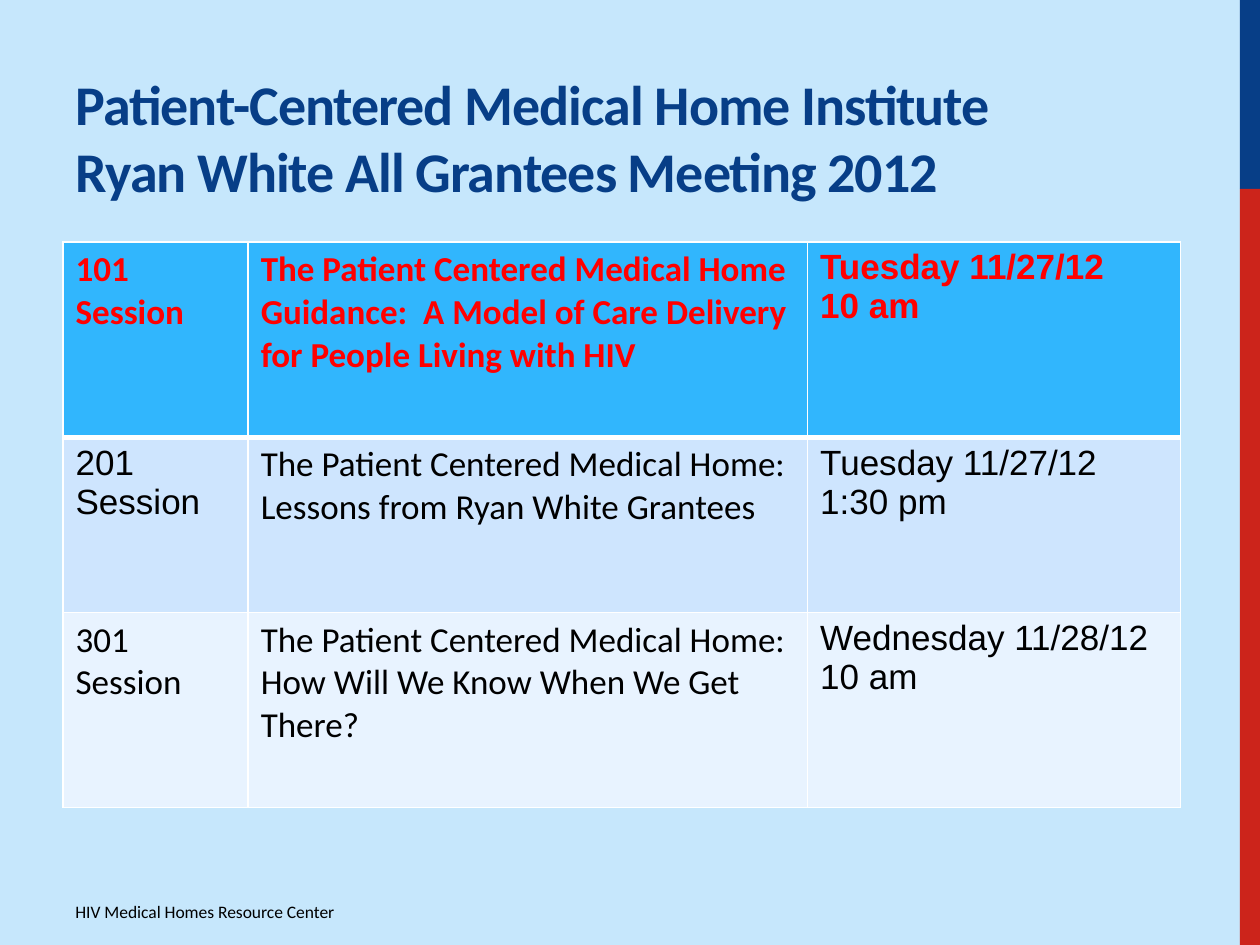
from dataclasses import dataclass

from lxml.etree import SubElement
from pptx import Presentation
from pptx.dml.color import RGBColor
from pptx.enum.shapes import MSO_SHAPE
from pptx.enum.text import MSO_ANCHOR, MSO_AUTO_SIZE, PP_ALIGN
from pptx.oxml.ns import qn
from pptx.util import Inches, Pt


@dataclass(frozen=True)
class Theme:
    sky: str = "C6E7FC"
    navy: str = "073E87"
    red: str = "CC241B"
    highlight: str = "FF0000"
    black: str = "000000"
    white: str = "FFFFFF"
    row_fills: tuple = ("31B6FD", "CEE5FE", "E8F3FF")
    body: str = "Calibri"
    plain: str = "Arial"
    title_size: int = 32
    table_size: int = 20
    footer_size: int = 10


THEME = Theme()

COLUMN_WIDTHS = (1.47, 4.44, 2.96)
ROW_HEIGHTS = (1.55, 1.39, 1.55)

# Each cell: font and its paragraphs
SESSIONS = (
    ((THEME.body, ["101 Session"]),
     (THEME.body, ["The Patient Centered Medical Home Guidance:\u00a0 "
                   "A Model of Care Delivery for People Living with HIV"]),
     (THEME.plain, ["Tuesday 11/27/12", "10 am"])),
    ((THEME.plain, ["201 Session"]),
     (THEME.body, ["The Patient Centered Medical Home: "
                   "Lessons from Ryan White Grantees"]),
     (THEME.plain, ["Tuesday 11/27/12", "1:30 pm"])),
    ((THEME.body, ["301 Session"]),
     (THEME.body, ["The Patient Centered Medical Home: "
                   "How Will We Know When We Get There?"]),
     (THEME.plain, ["Wednesday 11/28/12", "10 am"])),
)


def rgb(value):
    return RGBColor.from_string(value)


def add_run(paragraph, text, font, size, color, bold=False):
    run = paragraph.add_run()
    run.text = text
    run.font.name = font
    run.font.size = Pt(size)
    run.font.bold = bold
    run.font.color.rgb = rgb(color)
    return run


def add_panel(slide, left, top, width, height, color):
    panel = slide.shapes.add_shape(
        MSO_SHAPE.RECTANGLE, Inches(left), Inches(top), Inches(width), Inches(height))
    panel.fill.solid()
    panel.fill.fore_color.rgb = rgb(color)
    panel.line.fill.background()
    panel.shadow.inherit = False
    # Panels sit behind the title placeholder
    tree = slide.shapes._spTree
    tree.remove(panel._element)
    tree.insert_element_before(panel._element, "p:sp")


def add_title(slide, lines):
    title = slide.shapes.title
    title.left, title.top = Inches(0.5), Inches(0.17)
    title.width, title.height = Inches(8.99), Inches(1.5)
    frame = title.text_frame
    frame.auto_size = MSO_AUTO_SIZE.NONE
    frame.vertical_anchor = MSO_ANCHOR.BOTTOM
    paragraph = frame.paragraphs[0]
    paragraph.alignment = PP_ALIGN.LEFT
    for index, line in enumerate(lines):
        if index:
            paragraph.add_line_break()
        run = add_run(paragraph, line, THEME.body, THEME.title_size, THEME.navy, True)
        run.font._element.set("spc", "-60")


def set_borders(cell, top, bottom):
    properties = cell._tc.get_or_add_tcPr()
    for side, width in (("L", 1), ("R", 1), ("T", top), ("B", bottom)):
        line = SubElement(properties, qn(f"a:ln{side}"), w=str(Pt(width)))
        fill = SubElement(line, qn("a:solidFill"))
        SubElement(fill, qn("a:srgbClr"), val=THEME.white)


def add_schedule(slide):
    table = slide.shapes.add_table(
        len(ROW_HEIGHTS), len(COLUMN_WIDTHS), Inches(0.5), Inches(1.92),
        Inches(sum(COLUMN_WIDTHS)), Inches(sum(ROW_HEIGHTS))).table
    for column, width in zip(table.columns, COLUMN_WIDTHS):
        column.width = Inches(width)
    for row_index, session in enumerate(SESSIONS):
        table.rows[row_index].height = Inches(ROW_HEIGHTS[row_index])
        first = row_index == 0
        for column_index, (font, lines) in enumerate(session):
            cell = table.cell(row_index, column_index)
            # The first row is set off by a thick rule
            set_borders(cell, top=3 if row_index == 1 else 1, bottom=3 if first else 1)
            cell.fill.solid()
            cell.fill.fore_color.rgb = rgb(THEME.row_fills[row_index])
            frame = cell.text_frame
            for line_index, line in enumerate(lines):
                paragraph = frame.add_paragraph() if line_index else frame.paragraphs[0]
                add_run(paragraph, line, font, THEME.table_size,
                        THEME.highlight if first else THEME.black, first)


def add_footer(slide, text):
    footer = slide.shapes.add_textbox(
        Inches(0.5), Inches(7.1), Inches(3.75), Inches(0.31))
    footer.text_frame.word_wrap = True
    add_run(footer.text_frame.paragraphs[0], text, THEME.body,
            THEME.footer_size, THEME.black)


def main():
    presentation = Presentation()
    presentation.slide_width, presentation.slide_height = Inches(10), Inches(7.5)
    slide = presentation.slides.add_slide(presentation.slide_layouts[5])

    # Backdrop and side stripe, front to back
    add_panel(slide, 9.84, 1.5, 0.16, 6, THEME.red)
    add_panel(slide, 9.84, 0, 0.16, 1.5, THEME.navy)
    add_panel(slide, 0, 0, 9.84, 7.5, THEME.sky)

    # Content
    add_title(slide, ("Patient-Centered Medical Home Institute",
                      "Ryan White All Grantees Meeting 2012"))
    add_schedule(slide)
    add_footer(slide, "HIV Medical Homes Resource Center")

    presentation.save("out.pptx")


if __name__ == "__main__":
    main()
